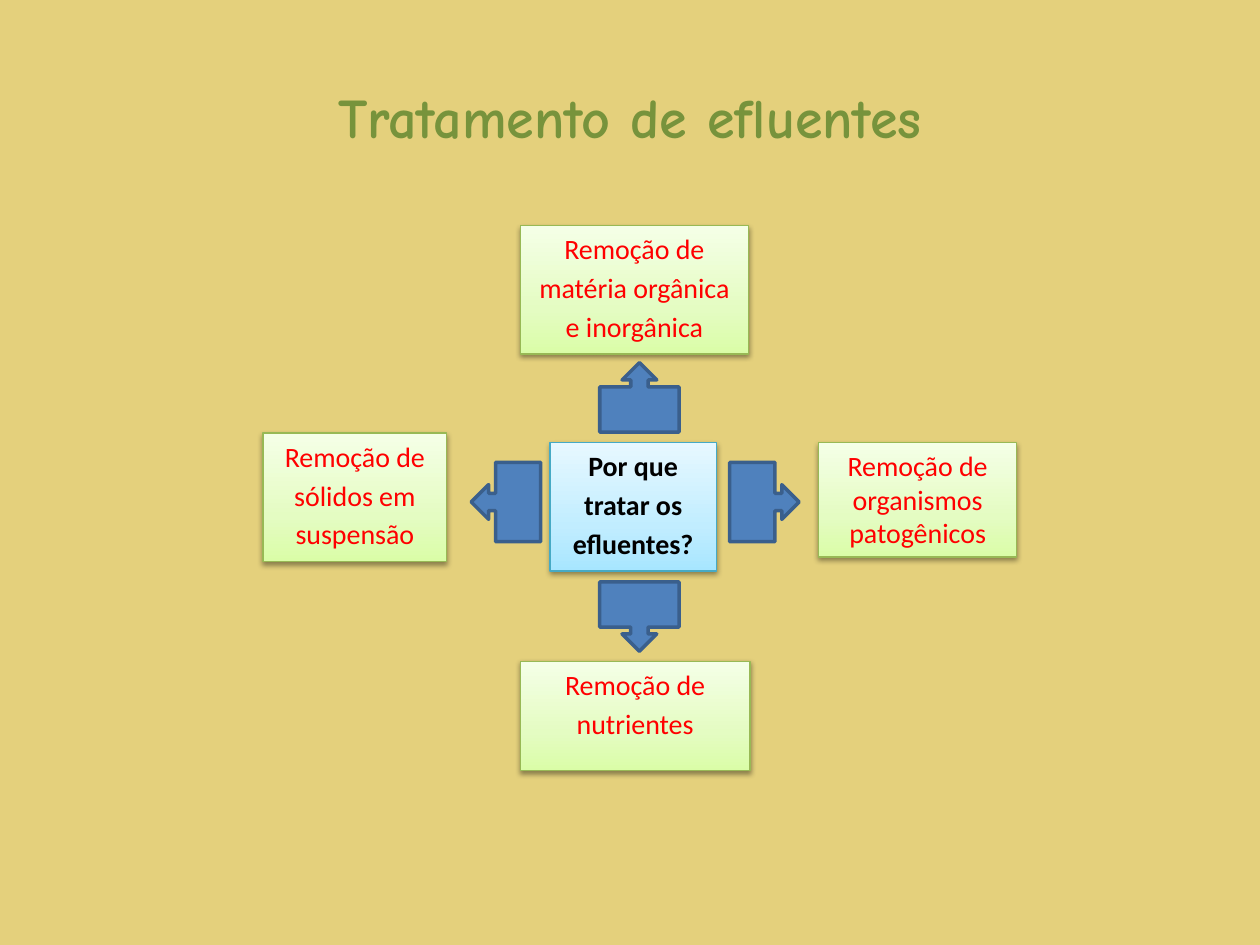
from lxml import etree
from pptx import Presentation
from pptx.dml.color import RGBColor
from pptx.enum.shapes import MSO_SHAPE
from pptx.enum.text import MSO_ANCHOR, PP_ALIGN
from pptx.oxml import parse_xml
from pptx.oxml.ns import nsdecls, qn
from pptx.util import Cm, Pt

RECTANGLE = MSO_SHAPE.RECTANGLE
CALLOUT = MSO_SHAPE.LEFT_ARROW_CALLOUT
CENTER = PP_ALIGN.CENTER
TOP, MIDDLE = MSO_ANCHOR.TOP, MSO_ANCHOR.MIDDLE

SAND = RGBColor(0xE4, 0xD0, 0x7C)
OLIVE = RGBColor(0x77, 0x93, 0x3C)
RED = RGBColor(0xFF, 0x00, 0x00)
BLACK = RGBColor(0x00, 0x00, 0x00)
BLUE = RGBColor(0x4F, 0x81, 0xBD)
DARK_BLUE = RGBColor(0x3A, 0x5F, 0x8C)
GREEN_LINE = RGBColor(0x98, 0xB9, 0x55)
CYAN_LINE = RGBColor(0x46, 0xAA, 0xC5)
GREEN_STOPS = [(0, RGBColor(0xDA, 0xFD, 0xA7)), (35, RGBColor(0xE4, 0xFC, 0xC2)),
               (100, RGBColor(0xF5, 0xFF, 0xE7))]
CYAN_STOPS = [(0, RGBColor(0xA7, 0xE6, 0xFF)), (35, RGBColor(0xC1, 0xED, 0xFF)),
              (100, RGBColor(0xE7, 0xF8, 0xFF))]

# Content: lengths in centimetres
TITLE = "Tratamento de efluentes"
ARROW_SIZE = (1.4, 1.6)
ARROWS = [  # centre x, centre y, rotation
    (10.2, 10.12, 0),
    (12.89, 12.43, 270),
    (15.41, 10.12, 180),
    (12.89, 8.01, 90),
]
QUESTION = (["Por que", "tratar os", "efluentes?"], (11.09, 8.92, 3.35, 2.59))
REASONS = [  # lines, (left, top, width, height), gap between lines in points
    (["Remoção de", "nutrientes"], (10.49, 13.33, 4.63, 2.21), 3),
    (["Remoção de", "matéria orgânica", "e inorgânica"], (10.49, 4.55, 4.6, 2.59), 3),
    (["Remoção de", "sólidos em", "suspensão"], (5.3, 8.73, 3.71, 2.59), 3),
    (["Remoção de", "organismos", "patogênicos"], (16.5, 8.92, 4, 2.31), 0),
]


def write(shape, lines, *, font="Calibri", size=16, color=RED, bold=False,
          anchor=TOP, gap=0):
    frame = shape.text_frame
    frame.word_wrap = True
    frame.vertical_anchor = anchor
    for index, line in enumerate(lines):
        para = frame.add_paragraph() if index else frame.paragraphs[0]
        para.alignment = CENTER
        if index:
            para.space_before = Pt(gap)
        span = para.add_run()
        span.text = line
        span.font.name = font
        span.font.size = Pt(size)
        span.font.bold = bold
        span.font.color.rgb = color


def add_block(page, kind, place, line_color, line_width):
    block = page.shapes.add_shape(kind, *(Cm(value) for value in place))
    block.shadow.inherit = False
    block.line.color.rgb = line_color
    block.line.width = Pt(line_width)
    return block


def add_card(page, lines, place, stops, line_color, **text_format):
    card = add_block(page, RECTANGLE, place, line_color, 0.75)
    # Three-stop gradient running upwards
    stop_xml = "".join(f'<a:gs pos="{position * 1000}"><a:srgbClr val="{color}"/></a:gs>'
                       for position, color in stops)
    properties = card.element.spPr
    properties.find(qn("a:prstGeom")).addnext(parse_xml(
        f'<a:gradFill {nsdecls("a")} rotWithShape="1"><a:gsLst>{stop_xml}</a:gsLst>'
        '<a:lin ang="16200000" scaled="0"/></a:gradFill>'))
    # Soft shadow below the card
    shadow = etree.SubElement(properties.find(qn("a:effectLst")), qn("a:outerShdw"),
                              blurRad=str(Pt(3.1)), dist=str(Pt(1.6)),
                              dir="5400000", rotWithShape="0")
    shade = etree.SubElement(shadow, qn("a:srgbClr"), val=str(BLACK))
    etree.SubElement(shade, qn("a:alpha"), val="38000")
    write(card, lines, **text_format)


def main():
    deck = Presentation()
    deck.slide_width, deck.slide_height = Cm(25.4), Cm(19.05)
    page = deck.slides.add_slide(deck.slide_layouts[5])
    page.background.fill.solid()
    page.background.fill.fore_color.rgb = SAND

    # Title
    title = page.shapes.title
    title.left, title.top, title.width, title.height = Cm(1.27), Cm(0.76), Cm(22.86), Cm(3.18)
    write(title, [TITLE], font="Comic Neue", size=32, color=OLIVE, bold=True, anchor=MIDDLE)

    # Arrows pointing away from the question
    width, height = ARROW_SIZE
    for center_x, center_y, rotation in ARROWS:
        place = (center_x - width / 2, center_y - height / 2, width, height)
        arrow = add_block(page, CALLOUT, place, DARK_BLUE, 2)
        arrow.fill.solid()
        arrow.fill.fore_color.rgb = BLUE
        arrow.rotation = rotation

    # Question and reasons
    lines, place = QUESTION
    add_card(page, lines, place, CYAN_STOPS, CYAN_LINE, color=BLACK, bold=True, gap=3)
    for lines, place, gap in REASONS:
        add_card(page, lines, place, GREEN_STOPS, GREEN_LINE, gap=gap)

    deck.save("out.pptx")


if __name__ == "__main__":
    main()
